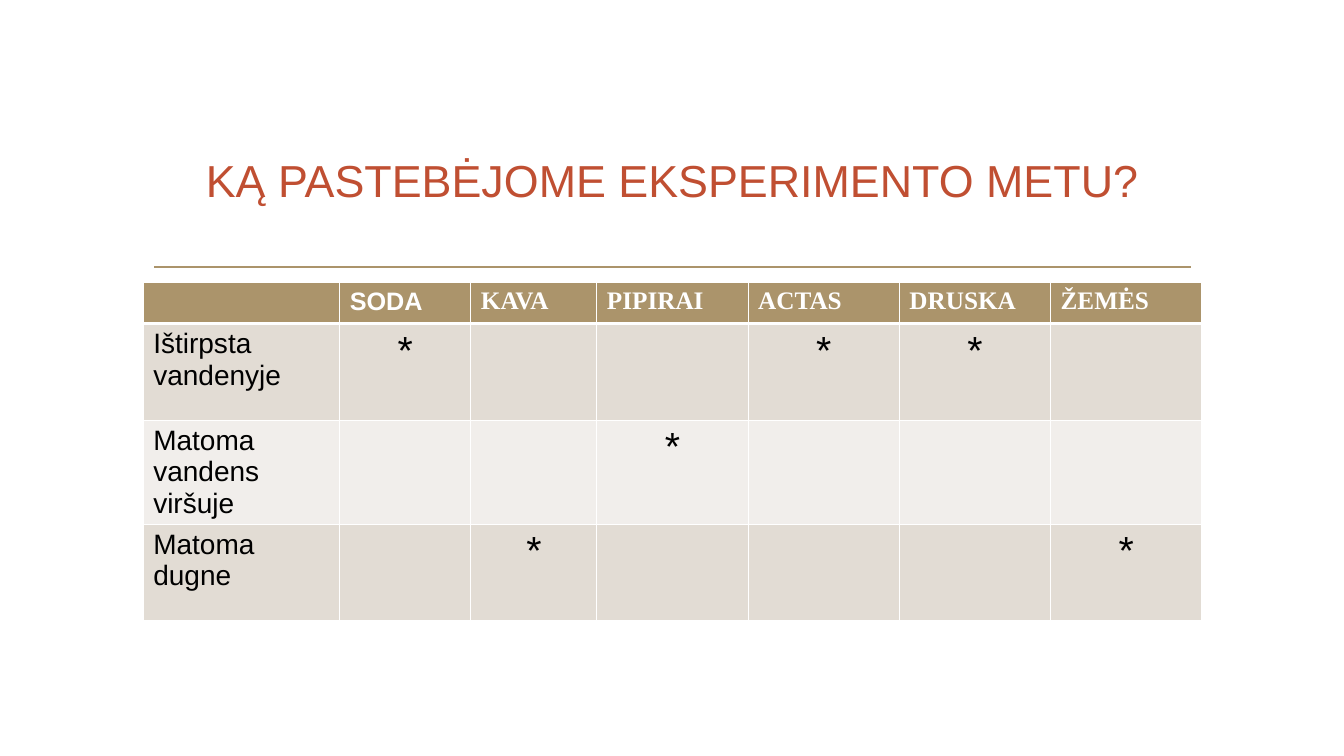
from lxml.etree import SubElement
from pptx import Presentation
from pptx.dml.color import RGBColor
from pptx.enum.shapes import MSO_CONNECTOR as Connector
from pptx.enum.text import MSO_ANCHOR as Anchor, PP_ALIGN as Align
from pptx.oxml.ns import qn
from pptx.util import Inches, Pt

TITLE = "KĄ PASTEBĖJOME EKSPERIMENTO METU?"
SUBSTANCES = ["SODA", "KAVA", "PIPIRAI", "ACTAS", "DRUSKA", "ŽEMĖS"]
OBSERVATIONS = [
    ("Ištirpsta\nvandenyje", {"SODA", "ACTAS", "DRUSKA"}),
    ("Matoma vandens viršuje", {"PIPIRAI"}),
    ("Matoma dugne", {"KAVA", "ŽEMĖS"}),
]
COLUMNS = [1.95, 1.3, 1.25, 1.5, 1.5, 1.5, 1.5]
ROWS = [0.41, 0.96, 1.03, 0.96]
LEFT, TOP, WIDTH = 1.42, 2.8, sum(COLUMNS)
GOLD, RUST, WHITE, BLACK = "AB946B", "C04F32", "FFFFFF", "000000"
BANDS = ["E2DCD4", "F1EEEB"]


def color(value):
    return RGBColor.from_string(value)


def write(frame, text, size, ink, align=Align.LEFT, font="Arial", bold=False):
    frame.text = text
    for para in frame.paragraphs:
        para.alignment = align
        for span in para.runs:
            span.font.size, span.font.name, span.font.bold = Pt(size), font, bold
            span.font.color.rgb = color(ink)


def paint(cell, fill, top, bottom):
    properties = cell._tc.get_or_add_tcPr()
    for side, width in (("L", 1), ("R", 1), ("T", top), ("B", bottom)):
        edge = SubElement(properties, qn(f"a:ln{side}"), w=str(Pt(width)))
        SubElement(SubElement(edge, qn("a:solidFill")), qn("a:srgbClr"), val=WHITE)
    cell.fill.solid()
    cell.fill.fore_color.rgb = color(fill)


def add_title(page):
    title = page.shapes.title
    title.left, title.top = Inches(LEFT), Inches(1.07)
    title.width, title.height = Inches(WIDTH), Inches(1.43)
    title.text_frame.vertical_anchor = Anchor.MIDDLE
    write(title.text_frame, TITLE, 32, RUST, Align.CENTER)


def add_rule(page):
    rule = page.shapes.add_connector(
        Connector.STRAIGHT, Inches(1.53), Inches(2.65), Inches(11.81), Inches(2.65))
    rule.line.color.rgb = color(GOLD)
    rule.line.width = Pt(1.25)
    SubElement(rule._element.spPr, qn("a:effectLst"))


def add_results(page):
    table = page.shapes.add_table(
        len(ROWS), len(COLUMNS), Inches(LEFT), Inches(TOP),
        Inches(WIDTH), Inches(sum(ROWS))).table
    for column, width in zip(table.columns, COLUMNS):
        column.width = Inches(width)
    for row, height in zip(table.rows, ROWS):
        row.height = Inches(height)
    for c in range(len(COLUMNS)):
        paint(table.cell(0, c), GOLD, 1, 3)
    for c, substance in enumerate(SUBSTANCES, 1):
        font = "Arial" if c == 1 else "Times New Roman"
        write(table.cell(0, c).text_frame, substance, 18, WHITE, font=font, bold=True)
    for r, (label, marked) in enumerate(OBSERVATIONS, 1):
        for c in range(len(COLUMNS)):
            paint(table.cell(r, c), BANDS[(r - 1) % 2], 3 if r == 1 else 1, 1)
        write(table.cell(r, 0).text_frame, label, 20, BLACK)
        for c, substance in enumerate(SUBSTANCES, 1):
            if substance in marked:
                write(table.cell(r, c).text_frame, "*", 28, BLACK, Align.CENTER)


def main():
    deck = Presentation()
    deck.slide_width, deck.slide_height = Inches(13.33), Inches(7.5)
    page = deck.slides.add_slide(deck.slide_layouts[5])
    add_rule(page)
    add_title(page)
    add_results(page)
    deck.save("out.pptx")


if __name__ == "__main__":
    main()
